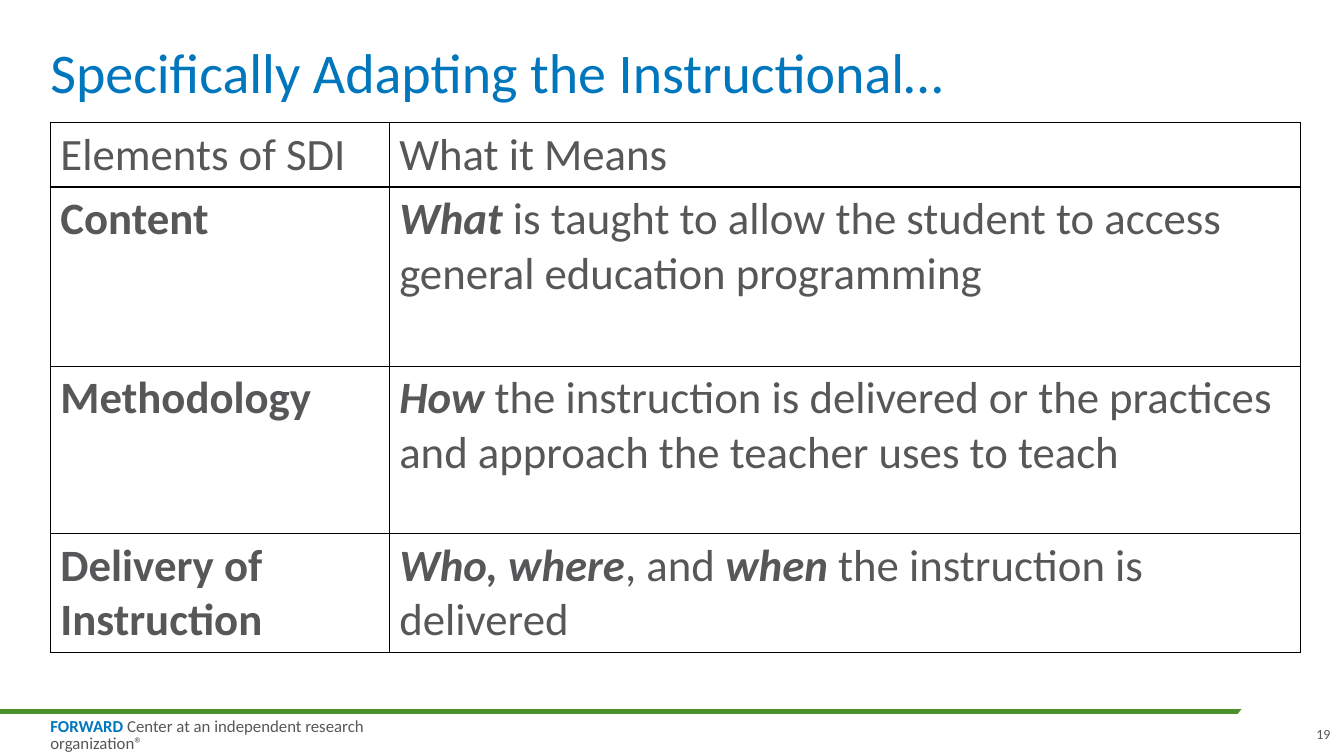
"""Build the slide on the elements of specially designed instruction."""
import pptx
import pptx.dml.color
import pptx.enum.shapes
import pptx.enum.text
import pptx.oxml
import pptx.oxml.ns
import pptx.util

Pt = pptx.util.Pt
ANCHOR = pptx.enum.text.MSO_ANCHOR
ALIGN = pptx.enum.text.PP_ALIGN
COLORS = {"blue": "0076BD", "gray": "59565A", "green": "4C902D",
          "white": "FFFFFF", "black": "000000"}
COLUMNS = [242, 650.8]
ROWS = [46.2, 128, 119.5, 85.2]
CELLS = [
    [[("Elements of SDI", "")], [("What it Means", "")]],
    [[("Content", "b")],
     [("What", "bi"),
      (" is taught to allow the student to access general education programming", "")]],
    [[("Methodology", "b")],
     [("How", "bi"),
      (" the instruction is delivered or the practices and approach the teacher uses to teach", "")]],
    [[("Delivery of Instruction", "b")],
     [("Who, where", "bi"), (", and ", ""), ("when", "bi"),
      (" the instruction is delivered", "")]],
]


def rgb(name):
    """Return the named colour."""
    return pptx.dml.color.RGBColor.from_string(COLORS[name])


def add_runs(p, runs, size, color="gray"):
    """Fill a paragraph with (text, style) runs; styles are b and i, or B for bold blue."""
    for text, style in runs:
        r = p.add_run()
        r.text = text
        r.font.name = "Calibri"
        r.font.size = Pt(size)
        r.font.bold = "b" in style.lower()
        r.font.italic = "i" in style
        r.font.color.rgb = rgb("blue" if "B" in style else color)


def add_text(s, box, runs, size, color="gray", anchor=ANCHOR.TOP,
             align=ALIGN.LEFT, spacing=1.0, wrap=False):
    """Add a one-paragraph text box without insets."""
    tf = s.shapes.add_textbox(*map(Pt, box)).text_frame
    tf.margin_left = tf.margin_right = tf.margin_top = tf.margin_bottom = 0
    tf.word_wrap = wrap
    tf.vertical_anchor = anchor
    p = tf.paragraphs[0]
    p.alignment = align
    p.line_spacing = spacing
    add_runs(p, runs, size, color)


def add_rule(s):
    """Add the green footer rule with its end cut by a tilted white ellipse."""
    y = Pt(508.3)
    line = s.shapes.add_connector(
        pptx.enum.shapes.MSO_CONNECTOR.STRAIGHT, 0, y, Pt(936), y)
    line.line.color.rgb = rgb("green")
    line.line.width = Pt(3)
    line._element.spPr.append(pptx.oxml.parse_xml(
        f'<a:effectLst {pptx.oxml.ns.nsdecls("a")}/>'))
    sp = s.shapes.add_shape(pptx.enum.shapes.MSO_SHAPE.OVAL,
                            Pt(875.5), Pt(487.4), Pt(85.7), Pt(41.8))
    sp.rotation = 332.1
    sp.shadow.inherit = False
    sp.fill.solid()
    sp.fill.fore_color.rgb = rgb("white")
    sp.line.fill.background()


def add_borders(cell):
    """Draw a thin black line on every side of a cell."""
    tcPr = cell._tc.get_or_add_tcPr()
    for i, side in enumerate("LRTB"):
        tcPr.insert(i, pptx.oxml.parse_xml(
            f'<a:ln{side} {pptx.oxml.ns.nsdecls("a")} w="{Pt(1)}"><a:solidFill>'
            f'<a:srgbClr val="{COLORS["black"]}"/></a:solidFill></a:ln{side}>'))


def add_grid(s):
    """Add the table of elements and meanings."""
    table = s.shapes.add_table(len(ROWS), len(COLUMNS), Pt(36), Pt(87.4),
                               Pt(sum(COLUMNS)), Pt(sum(ROWS))).table
    table.horz_banding = False
    table.first_row = False
    for column, width in zip(table.columns, COLUMNS):
        column.width = Pt(width)
    for row, height, texts in zip(table.rows, ROWS, CELLS):
        row.height = Pt(height)
        for cell, runs in zip(row.cells, texts):
            cell.fill.background()
            add_runs(cell.text_frame.paragraphs[0], runs, 32)
            add_borders(cell)


def main():
    """Build and save the slide."""
    prs = pptx.Presentation()
    prs.slide_width, prs.slide_height = Pt(960), Pt(540)
    s = prs.slides.add_slide(prs.slide_layouts[6])
    add_rule(s)
    add_text(s, (36, 513.4, 289.4, 12.2),
             [("FORWARD", "B"), (" Center at an independent research organization®", "")],
             12, spacing=0.85)
    add_text(s, (36, -28.8, 828, 104.4),
             [("Specifically Adapting the Instructional…", "")],
             40, "blue", ANCHOR.BOTTOM, spacing=0.9, wrap=True)
    add_grid(s)
    add_text(s, (938.2, 518.4, 12.2, 12.2), [("19", "")], 10,
             anchor=ANCHOR.BOTTOM, align=ALIGN.RIGHT)
    prs.save("out.pptx")


if __name__ == "__main__":
    main()
